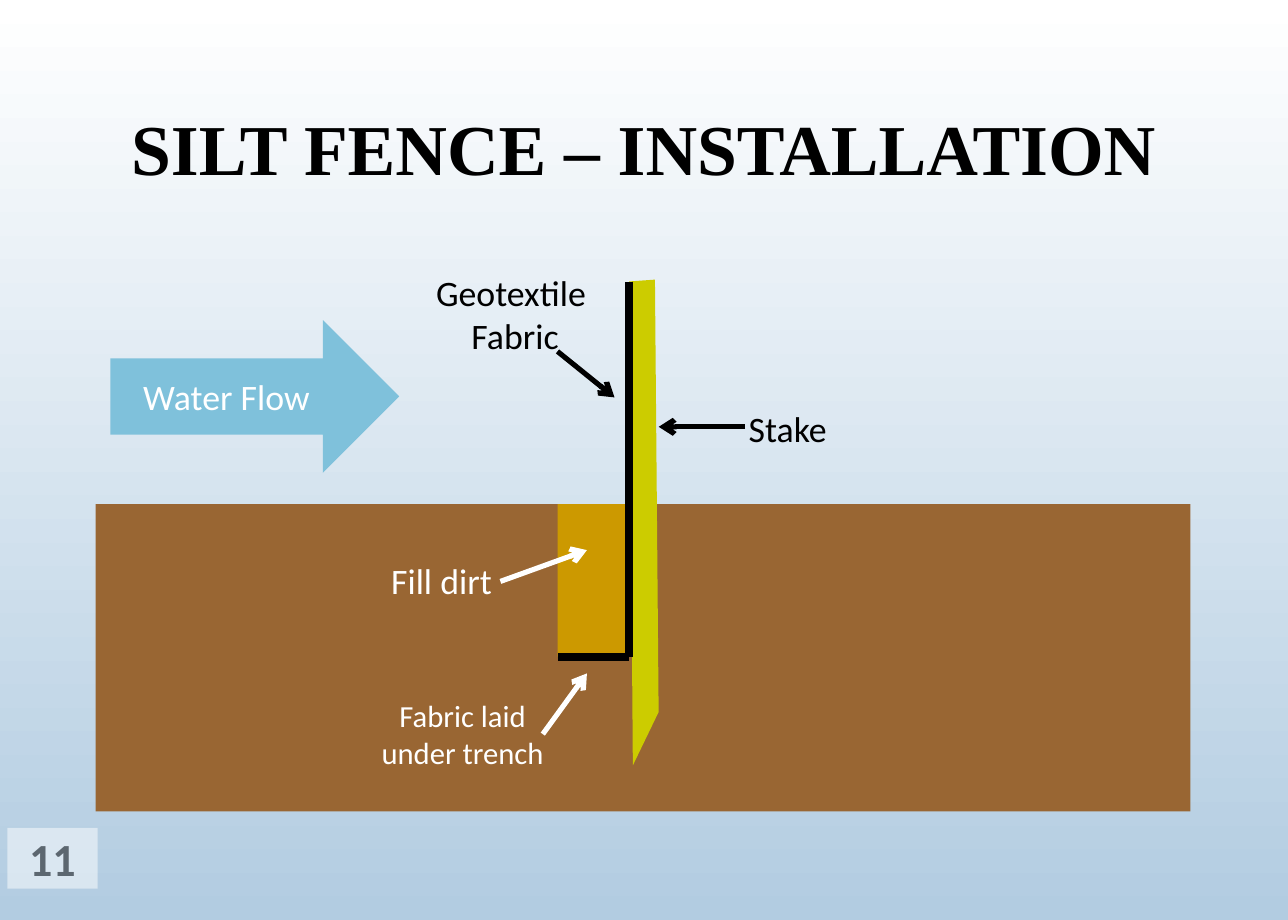
from dataclasses import dataclass

from lxml.etree import SubElement
from pptx import Presentation
from pptx.dml.color import RGBColor
from pptx.enum.shapes import MSO_CONNECTOR, MSO_SHAPE
from pptx.enum.text import MSO_ANCHOR, PP_ALIGN
from pptx.oxml.ns import qn
from pptx.util import Inches, Pt


@dataclass(frozen=True)
class Theme:
    """Colours, fonts and type sizes of the slide."""
    black: str = "000000"
    white: str = "FFFFFF"
    sky: str = "B2CCE1"
    soil: str = "996633"
    fill_dirt: str = "CC9900"
    stake: str = "CCCC00"
    water: str = "7FC1DB"
    number: str = "5C6770"
    title_font: str = "Times New Roman"
    body_font: str = "Calibri"
    title_size: int = 28
    number_size: int = 18
    label_size: int = 14
    small_size: int = 12
    fabric_width: int = 3
    pointer_width: int = 2


THEME = Theme()


def paint(sp, color):
    """Give a shape a plain fill without outline or shadow."""
    sp.shadow.inherit = False
    sp.fill.solid()
    sp.fill.fore_color.rgb = RGBColor.from_string(color)
    sp.line.fill.background()


def add_block(s, kind, box, color):
    """Add a filled preset shape."""
    sp = s.shapes.add_shape(kind, *map(Inches, box))
    paint(sp, color)
    return sp


def write(sp, lines, size, color, font=THEME.body_font, bold=False,
          align=PP_ALIGN.CENTER, anchor=MSO_ANCHOR.TOP):
    """Write one paragraph per line into a shape."""
    tf = sp.text_frame
    tf.word_wrap = True
    tf.vertical_anchor = anchor
    for i, line in enumerate(lines):
        p = tf.add_paragraph() if i else tf.paragraphs[0]
        p.text = line
        p.alignment = align
        p.font.name = font
        p.font.size = Pt(size)
        p.font.bold = bold
        p.font.color.rgb = RGBColor.from_string(color)
    return tf


def add_line(s, start, end, color, width, arrow=False):
    """Add a straight line, with an open arrowhead at its end if asked."""
    c = s.shapes.add_connector(MSO_CONNECTOR.STRAIGHT, *map(Inches, start + end))
    c.line.color.rgb = RGBColor.from_string(color)
    c.line.width = Pt(width)
    if arrow:
        SubElement(c.line._get_or_add_ln(), qn("a:tailEnd"), type="arrow")
    SubElement(c._element.spPr, qn("a:effectLst"))


def add_background(s):
    """Fill the background from white down to sky blue."""
    fill = s.background.fill
    fill.gradient()
    fill.gradient_angle = 270
    for stop, color in zip(fill.gradient_stops, (THEME.white, THEME.sky)):
        stop.color.rgb = RGBColor.from_string(color)


def add_title(s, box):
    """Add the slide title."""
    sp = s.shapes.add_textbox(*map(Inches, box))
    tf = write(sp, ["SILT FENCE – INSTALLATION"], THEME.title_size, THEME.black,
               THEME.title_font, True, anchor=MSO_ANCHOR.MIDDLE)
    tf.paragraphs[0].line_spacing = 0.9


def add_fence_diagram(s, box):
    """Draw the fence section: soil, stake, trench, fabric, flow and labels."""
    left, top, width, height = box

    def at(x, y):
        return left + x, top + y

    ground, fabric_x, trench_x, trench_y = 1.32, 2.9, 2.51, 2.15
    add_block(s, MSO_SHAPE.RECTANGLE, (*at(0, ground), width, height - ground), THEME.soil)

    outline = [tuple(map(Inches, at(x, y))) for x, y in
               ((fabric_x, 0.11), (2.92, 2.74), (3.06, 2.45), (3.04, 0.1))]
    builder = s.shapes.build_freeform(*outline[0])
    builder.add_line_segments(outline[1:], close=True)
    paint(builder.convert_to_shape(), THEME.stake)

    add_block(s, MSO_SHAPE.RECTANGLE,
              (*at(trench_x, ground), fabric_x - trench_x, trench_y - ground), THEME.fill_dirt)
    corner = at(fabric_x, trench_y)
    for start, end in ((at(fabric_x, 0.11), corner), (corner, at(trench_x, trench_y))):
        add_line(s, start, end, THEME.black, THEME.fabric_width)

    add_block(s, MSO_SHAPE.RIGHT_ARROW, (*at(0.08, 0.32), 1.57, 0.83), THEME.water)

    pointers = (
        (at(3.53, 0.9), at(3.06, 0.9), THEME.black),
        (at(2.51, 0.49), at(2.82, 0.74), THEME.black),
        (at(2.43, 2.57), at(2.67, 2.24), THEME.white),
        (at(2.2, 1.74), at(2.67, 1.57), THEME.white),
    )
    for start, end, color in pointers:
        add_line(s, start, end, color, THEME.pointer_width, arrow=True)

    labels = (
        (["Water Flow"], (0.16, 0.57, 1.17, 0.34), THEME.label_size, THEME.white, PP_ALIGN.LEFT),
        (["Stake"], (3.45, 0.74, 0.78, 0.34), THEME.label_size, THEME.black, PP_ALIGN.LEFT),
        (["Geotextile ", "Fabric"], (1.73, 0, 1.1, 0.57), THEME.label_size, THEME.black,
         PP_ALIGN.CENTER),
        (["Fill dirt"], (1.41, 1.57, 0.94, 0.34), THEME.label_size, THEME.white,
         PP_ALIGN.CENTER),
        (["Fabric laid under trench"], (1.41, 2.32, 1.17, 0.5), THEME.small_size, THEME.white,
         PP_ALIGN.CENTER),
    )
    for lines, (x, y, w, h), size, color, align in labels:
        sp = s.shapes.add_textbox(*map(Inches, (*at(x, y), w, h)))
        write(sp, lines, size, color, align=align)


def add_slide_number(s, box):
    """Add the page number on a half-transparent white tile."""
    sp = add_block(s, MSO_SHAPE.RECTANGLE, box, THEME.white)
    color = sp._element.spPr.find(qn("a:solidFill"))[0]
    SubElement(color, qn("a:alpha"), val="50000")
    write(sp, ["11"], THEME.number_size, THEME.number, bold=True, anchor=MSO_ANCHOR.MIDDLE)


def main():
    """Build and save the slide."""
    prs = Presentation()
    prs.slide_width, prs.slide_height = Inches(7), Inches(5)
    s = prs.slides.add_slide(prs.slide_layouts[6])
    add_background(s)
    add_title(s, (0.52, 0.25, 5.95, 1.16))
    add_fence_diagram(s, (0.52, 1.42, 5.95, 2.99))
    add_slide_number(s, (0.04, 4.5, 0.49, 0.33))
    prs.save("out.pptx")


if __name__ == "__main__":
    main()
